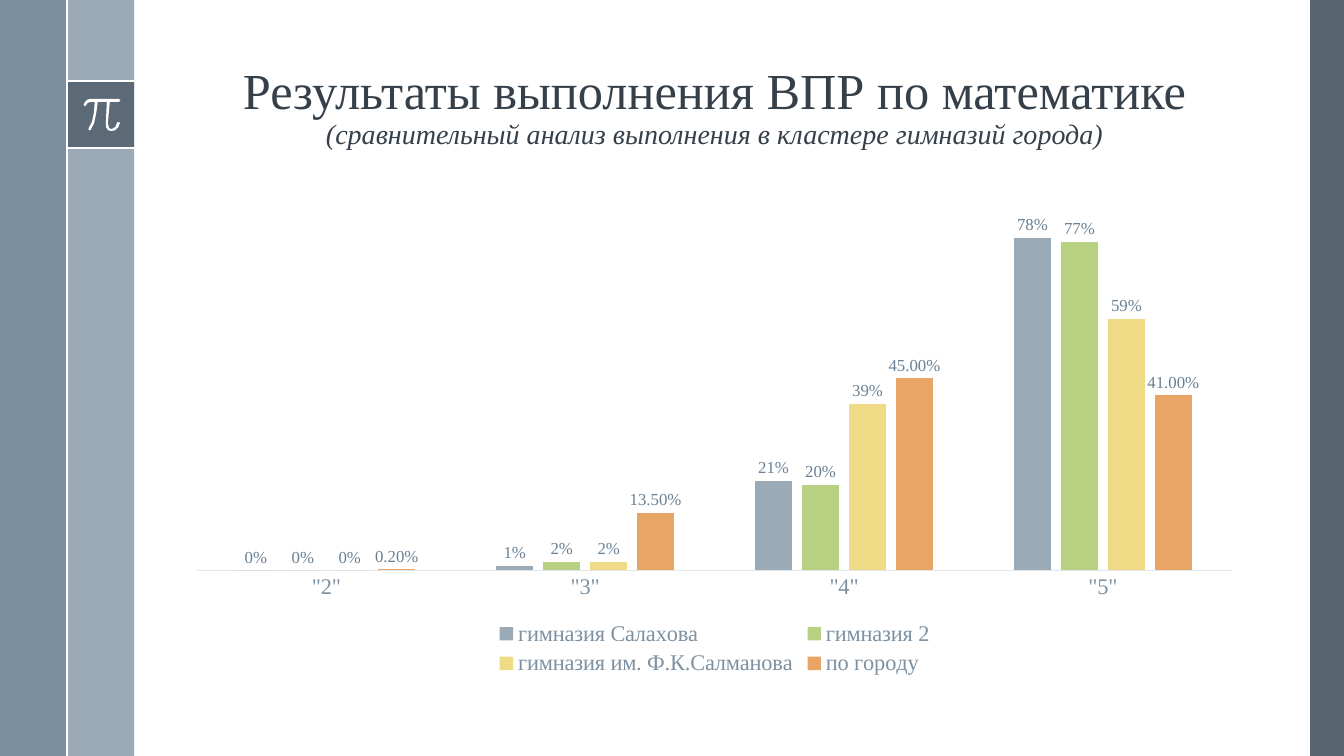
from lxml.etree import SubElement
from pptx import Presentation
from pptx.chart.data import CategoryChartData
from pptx.dml.color import RGBColor
from pptx.enum.chart import XL_CHART_TYPE as ChartType
from pptx.enum.chart import XL_LABEL_POSITION as LabelPosition
from pptx.enum.chart import XL_LEGEND_POSITION as LegendPosition
from pptx.enum.chart import XL_TICK_MARK as TickMark
from pptx.enum.shapes import MSO_CONNECTOR as Connector
from pptx.enum.shapes import MSO_SHAPE as Shape
from pptx.enum.text import MSO_ANCHOR as Anchor
from pptx.enum.text import MSO_AUTO_SIZE as AutoSize
from pptx.enum.text import PP_ALIGN as Align
from pptx.oxml.ns import qn
from pptx.util import Cm, Pt

COLORS = {
    "dark": "475562", "light": "9BAAB7", "steel": "6A8093", "white": "FFFFFF",
    "title": "35404A", "chart": "465562", "axis": "7D91A2", "rule": "E1E6EA",
    "label": "6A8094", "green": "B8D082", "yellow": "EFDB85", "orange": "E8A565",
}
FONT = "Times New Roman"
WIDTH, HEIGHT, BAND = 33.87, 19.05, 1.69
TILE_TOP = 2.05
CONTENT_LEFT, CONTENT_WIDTH = 4.42, 27.18
GRADES = ['"2"', '"3"', '"4"', '"5"']
RESULTS = [
    ("гимназия Салахова", (0, 0.01, 0.21, 0.78), "light", "0%"),
    ("гимназия 2", (0, 0.02, 0.2, 0.77), "green", "0%"),
    ("гимназия им. Ф.К.Салманова", (0, 0.02, 0.39, 0.59), "yellow", "0%"),
    ("по городу", (0.002, 0.135, 0.45, 0.41), "orange", "0.00%"),
]
PI_OUTLINE = [
    (1180, 980), (900, 980), (865, 990), (842, 1015), (830, 1040), (840, 1053),
    (852, 1048), (870, 1020), (900, 1010), (940, 1010), (932, 1120), (912, 1210),
    (880, 1270), (878, 1285), (888, 1293), (900, 1288), (935, 1220), (957, 1110),
    (970, 1010), (1060, 1010), (1050, 1220), (1052, 1260), (1070, 1290),
    (1100, 1300), (1140, 1293), (1172, 1265), (1190, 1220), (1180, 1210),
    (1162, 1215), (1145, 1258), (1110, 1280), (1082, 1272), (1070, 1220),
    (1090, 1010), (1180, 1010), (1194, 998),
]


def rgb(name):
    """Return the named palette colour."""
    return RGBColor.from_string(COLORS[name])


def format_font(font, size, color, **extras):
    """Apply the slide typeface, a size and a colour to a font."""
    values = {"name": FONT, "size": Pt(size), **extras}
    for attribute, value in values.items():
        setattr(font, attribute, value)
    font.color.rgb = rgb(color)


def paint(shape, color, opacity=100):
    """Fill a borderless shape with a colour at the given opacity."""
    shape.shadow.inherit = False
    shape.line.fill.background()
    shape.fill.solid()
    shape.fill.fore_color.rgb = rgb(color)
    if opacity < 100:
        tint = shape.fill._xPr.find(qn("a:solidFill")).find(qn("a:srgbClr"))
        SubElement(tint, qn("a:alpha"), val=str(opacity * 1000))


def add_band(slide, left, top, width, height, color, opacity=100):
    """Add a plain rectangle measured in centimetres."""
    box = [Cm(value) for value in (left, top, width, height)]
    paint(slide.shapes.add_shape(Shape.RECTANGLE, *box), color, opacity)


def add_divider(slide, *ends):
    """Add a white line between two points in centimetres."""
    divider = slide.shapes.add_connector(Connector.STRAIGHT, *[Cm(end) for end in ends])
    divider.line.color.rgb = rgb("white")
    divider.line.width = Pt(1.5)
    SubElement(divider._element.spPr, qn("a:effectLst"))


def add_pi(slide):
    """Draw the white pi sign on its tile."""
    start, *rest = PI_OUTLINE
    outline = slide.shapes.build_freeform(*start, scale=Cm(2.54) / 1000)
    outline.add_line_segments(rest, close=True)
    paint(outline.convert_to_shape(), "white")


def add_sidebars(slide):
    """Draw the side bands, the pi tile and their dividers."""
    add_band(slide, 33.02, 0, WIDTH - 33.02, HEIGHT, "dark", 90)
    add_band(slide, BAND, 0, BAND, HEIGHT, "light")
    add_band(slide, 0, 0, BAND, HEIGHT, "steel", 88)
    add_band(slide, BAND, TILE_TOP, BAND, BAND, "dark", 75)
    for y in (TILE_TOP, TILE_TOP + BAND):
        add_divider(slide, BAND, y, 2 * BAND, y)
    add_pi(slide)
    add_divider(slide, BAND, 0, BAND, HEIGHT)


def fill_title(title):
    """Place the title and write its heading and subtitle."""
    box = {"left": CONTENT_LEFT, "top": 0.48, "width": CONTENT_WIDTH, "height": 3.45}
    for attribute, value in box.items():
        setattr(title, attribute, Cm(value))
    frame = title.text_frame
    frame.auto_size = AutoSize.NONE
    frame.vertical_anchor = Anchor.BOTTOM
    heading = frame.paragraphs[0]
    heading.alignment = Align.CENTER
    heading.line_spacing = 0.9
    main_run = heading.add_run()
    main_run.text = "Результаты выполнения ВПР по математике"
    format_font(main_run.font, 36, "title")
    heading.add_line_break()
    subtitle = heading.add_run()
    subtitle.text = "(сравнительный анализ выполнения в кластере гимназий города)"
    format_font(subtitle.font, 20, "title", italic=True)


def format_axes(chart):
    """Style the grade axis and hide the percentage axis."""
    grades, percents = chart.category_axis, chart.value_axis
    grades.major_tick_mark = grades.minor_tick_mark = TickMark.NONE
    grades.format.line.color.rgb = rgb("rule")
    grades.format.line.width = Pt(0.75)
    format_font(grades.tick_labels.font, 16, "axis")
    scale = {"minimum_scale": 0, "maximum_scale": 0.9,
             "has_major_gridlines": False, "visible": False}
    for attribute, value in scale.items():
        setattr(percents, attribute, value)
    percents.tick_labels.number_format = "0%"
    percents.tick_labels.number_format_is_linked = False


def format_series(series, color, number_format):
    """Colour one school's columns and show their values."""
    series.format.fill.solid()
    series.format.fill.fore_color.rgb = rgb(color)
    series.invert_if_negative = False
    labels = series.data_labels
    settings = {"show_value": True, "position": LabelPosition.OUTSIDE_END,
                "number_format": number_format, "number_format_is_linked": False}
    for attribute, value in settings.items():
        setattr(labels, attribute, value)
    format_font(labels.font, 12, "label")


def add_results_chart(slide):
    """Add the clustered columns comparing the schools."""
    table = CategoryChartData(number_format="0%")
    table.categories = GRADES
    for school, shares, _, number_format in RESULTS:
        table.add_series(school, shares, number_format)
    box = [Cm(value) for value in (CONTENT_LEFT, 4.45, CONTENT_WIDTH, 12.7)]
    chart = slide.shapes.add_chart(ChartType.COLUMN_CLUSTERED, *box, table).chart
    chart.has_title = False
    format_font(chart.font, 10, "chart")
    format_axes(chart)
    columns = chart.plots[0]
    for attribute, value in {"gap_width": 219, "overlap": -27, "vary_by_categories": False}.items():
        setattr(columns, attribute, value)
    for series, (_, _, color, number_format) in zip(columns.series, RESULTS):
        format_series(series, color, number_format)
    chart.has_legend = True
    chart.legend.position = LegendPosition.BOTTOM
    chart.legend.include_in_layout = False
    format_font(chart.legend.font, 16, "axis")


def main():
    """Build the slide and save it."""
    deck = Presentation()
    deck.slide_width, deck.slide_height = Cm(WIDTH), Cm(HEIGHT)
    slide = deck.slides.add_slide(deck.slide_layouts[5])
    add_sidebars(slide)
    fill_title(slide.shapes.title)
    add_results_chart(slide)
    deck.save("out.pptx")


if __name__ == "__main__":
    main()
